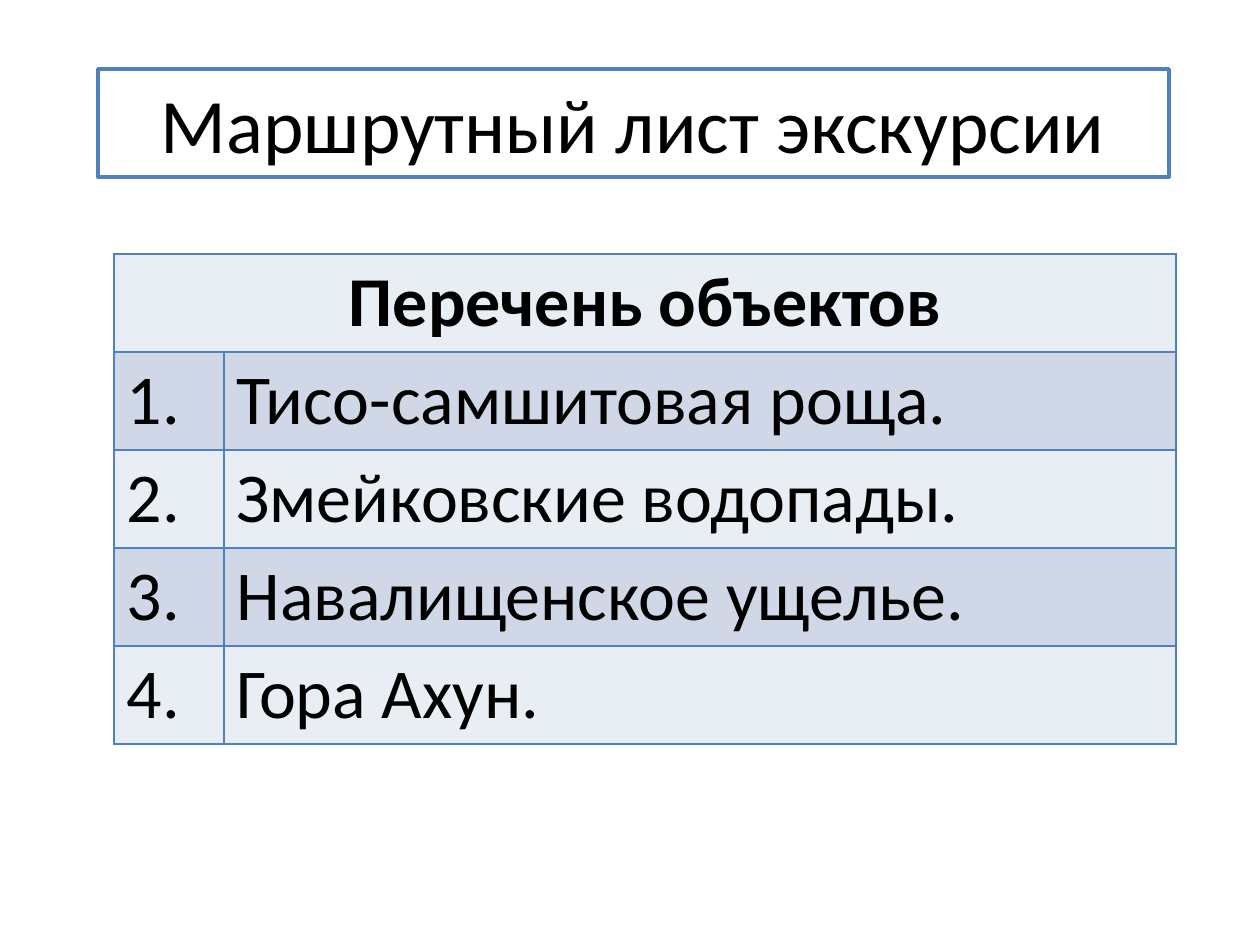
from pptx import Presentation
from pptx.dml.color import RGBColor as RGB
from pptx.enum.text import MSO_ANCHOR as Anchor, PP_ALIGN as Align
from pptx.oxml import parse_xml
from pptx.oxml.ns import nsdecls
from pptx.util import Pt

SCALE = 914400 / 126  # EMU per px
FONT = "Calibri"
COLORS = {
    "paper": "FFFFFF",
    "text": "000000",
    "line": "4F81BD",
    "light": "E9EDF4",
    "dark": "D0D8E8",
}
STOPS = [
    "Тисо-самшитовая роща.",
    "Змейковские водопады.",
    "Навалищенское ущелье.",
    "Гора Ахун.",
]


def px(n):
    return round(n * SCALE)


def color(name):
    return RGB.from_string(COLORS[name])


def write(frame, text, size, align=Align.LEFT, bold=False):
    frame.text = text
    par = frame.paragraphs[0]
    par.alignment = align
    font = par.runs[0].font
    font.name, font.size, font.bold = FONT, Pt(size), bold
    font.color.rgb = color("text")


def paint(cell, fill):
    # Borders go before the fill in the cell properties
    props = cell._tc.get_or_add_tcPr()
    for side in "LRTB":
        props.append(parse_xml(
            f'<a:ln{side} {nsdecls("a")} w="{Pt(1)}"><a:solidFill>'
            f'<a:srgbClr val="{COLORS["line"]}"/></a:solidFill></a:ln{side}>'))
    cell.fill.solid()
    cell.fill.fore_color.rgb = color(fill)


def add_title(slide, x, y, w, h):
    title = slide.shapes.title
    title.left, title.top, title.width, title.height = map(px, (x, y, w, h))
    title.fill.solid()
    title.fill.fore_color.rgb = color("paper")
    title.line.color.rgb = color("line")
    title.line.width = Pt(2)
    title.text_frame.vertical_anchor = Anchor.MIDDLE
    write(title.text_frame, "Маршрутный лист экскурсии", 44, Align.CENTER)


def add_stops(slide, x, y, w, h):
    count = len(STOPS) + 1
    table = slide.shapes.add_table(count, 2, *map(px, (x, y, w, h))).table
    first = 110
    table.columns[0].width = px(first)
    table.columns[1].width = px(w - first)

    # Banded rows
    for i, row in enumerate(table.rows):
        row.height = px(h // count)
        for cell in row.cells:
            paint(cell, "dark" if i % 2 else "light")

    # Heading across both columns
    head = table.cell(0, 0)
    head.merge(table.cell(0, 1))
    write(head.text_frame, "Перечень объектов", 40, Align.CENTER, True)

    # Numbered stops
    for i, stop in enumerate(STOPS, 1):
        write(table.cell(i, 0).text_frame, f"{i}.", 40)
        write(table.cell(i, 1).text_frame, stop, 40)


def main():
    deck = Presentation()
    deck.slide_width, deck.slide_height = px(1260), px(945)
    slide = deck.slides.add_slide(deck.slide_layouts[5])
    add_title(slide, 98, 69, 1071, 108)
    add_stops(slide, 114, 254, 1062, 490)
    deck.save("out.pptx")


if __name__ == "__main__":
    main()
